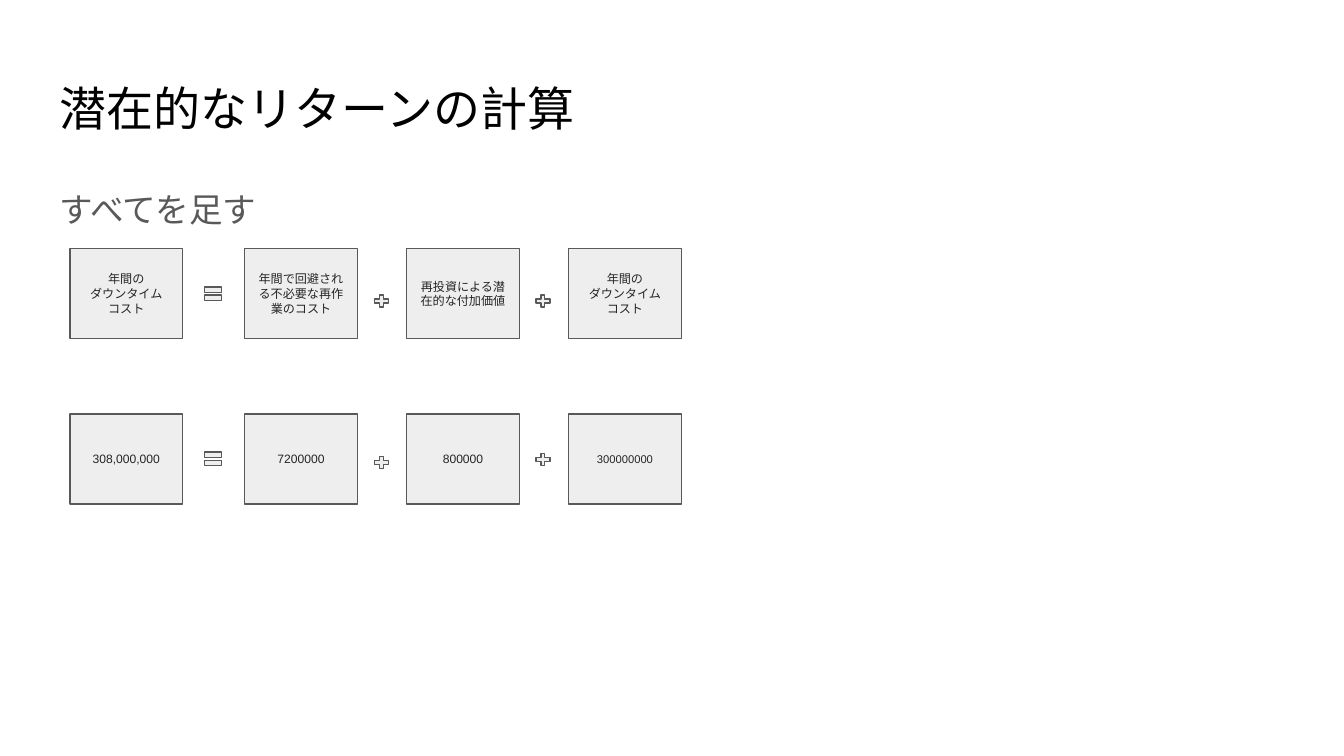
from pptx import Presentation
from pptx.dml.color import RGBColor
from pptx.enum.shapes import MSO_SHAPE
from pptx.enum.text import MSO_ANCHOR, MSO_AUTO_SIZE, PP_ALIGN
from pptx.util import Inches, Pt
from lxml import etree

TITLE = "潜在的なリターンの計算"
SUBTITLE = "すべてを足す"
DOWNTIME = "年間の\nダウンタイム\nコスト"

# Each term: text and font size; plus_tops belong to the two plus signs.
EQUATIONS = [
    {"top": 1.85, "plus_tops": [2.18, 2.18],
     "terms": [(DOWNTIME, 6.5), ("年間で回避される不必要な再作業のコスト", 6.5),
               ("再投資による潜在的な付加価値", 6.5), (DOWNTIME, 6.5)]},
    {"top": 3.08, "plus_tops": [3.38, 3.36],
     "terms": [("308,000,000", 6.5), ("7200000", 6.5),
               ("800000", 6.5), ("300000000", 6)]},
]
COLORS = {"title": "000000", "subtitle": "595959", "text": "252525",
          "fill": "EEEEEE", "line": "595959"}
FONT = "Arial"
SLIDE_WIDTH = 10
SLIDE_HEIGHT = SLIDE_WIDTH * 9 / 16
RESULT_LEFT, FIRST_TERM_LEFT, LAST_TERM_LEFT = 0.52, 1.82, 4.23
TERM_STEP = (LAST_TERM_LEFT - FIRST_TERM_LEFT) / 2
BOX_WIDTH, BOX_HEIGHT = 0.84, 0.67
EQUAL_LEFT, EQUAL_SIZE = 1.5, 0.17
PLUS_LEFT, PLUS_STEP, PLUS_WIDTH, PLUS_HEIGHT = 2.77, 1.2, 0.14, 0.12


def color(name):
    return RGBColor.from_string(COLORS[name])


def place(shape, left, top, width, height):
    shape.left, shape.top = Inches(left), Inches(top)
    shape.width, shape.height = Inches(width), Inches(height)


def write(shape, text, size, color_name, align, anchor):
    frame = shape.text_frame
    frame.text = text
    frame.word_wrap = True
    frame.auto_size = MSO_AUTO_SIZE.NONE
    frame.vertical_anchor = anchor
    frame.margin_left = frame.margin_right = Inches(0.1)
    frame.margin_top = frame.margin_bottom = Inches(0.1)
    for paragraph in frame.paragraphs:
        paragraph.alignment = align
        paragraph.space_before = Pt(0)
        for run in paragraph.runs:
            run.font.name = FONT
            run.font.size = Pt(size)
            run.font.color.rgb = color(color_name)


def add_outlined(page, kind, left, top, width, height, adjustments=()):
    shape = page.shapes.add_shape(kind, Inches(left), Inches(top),
                                  Inches(width), Inches(height))
    shape.shadow.inherit = False
    shape.fill.solid()
    shape.fill.fore_color.rgb = color("fill")
    shape.line.color.rgb = color("line")
    shape.line.width = Pt(0.75)
    for index, value in enumerate(adjustments):
        shape.adjustments[index] = value
    return shape


def remove_bullet(paragraph):
    properties = paragraph._p.get_or_add_pPr()
    properties.set("marL", "0")
    properties.set("indent", "0")
    namespace = properties.nsmap["a"]
    etree.SubElement(properties, f"{{{namespace}}}buNone")


def add_equation(page, top, plus_tops, terms):
    """Draw one row: result = term + term + term."""
    lefts = [RESULT_LEFT] + [FIRST_TERM_LEFT + i * TERM_STEP for i in range(3)]
    for left, (text, size) in zip(lefts, terms):
        box = add_outlined(page, MSO_SHAPE.RECTANGLE, left, top,
                           BOX_WIDTH, BOX_HEIGHT)
        write(box, text, size, "text", PP_ALIGN.CENTER, MSO_ANCHOR.MIDDLE)
    add_outlined(page, MSO_SHAPE.MATH_EQUAL, EQUAL_LEFT,
                 top + (BOX_HEIGHT - EQUAL_SIZE) / 2,
                 EQUAL_SIZE, EQUAL_SIZE, (0.235, 0.118))
    for index, plus_top in enumerate(plus_tops):
        add_outlined(page, MSO_SHAPE.MATH_PLUS, PLUS_LEFT + index * PLUS_STEP,
                     plus_top, PLUS_WIDTH, PLUS_HEIGHT, (0.235,))


def main():
    deck = Presentation()
    deck.slide_width, deck.slide_height = Inches(SLIDE_WIDTH), Inches(SLIDE_HEIGHT)
    page = deck.slides.add_slide(deck.slide_layouts[1])

    title, body = page.shapes.title, page.placeholders[1]
    place(title, 0.34, 0.49, 9.32, 0.63)
    write(title, TITLE, 25.2, "title", PP_ALIGN.LEFT, MSO_ANCHOR.TOP)
    place(body, 0.34, 1.26, 9.32, 3.74)
    write(body, SUBTITLE, 18, "subtitle", PP_ALIGN.LEFT, MSO_ANCHOR.TOP)
    subtitle = body.text_frame.paragraphs[0]
    subtitle.line_spacing = 1.15
    subtitle.space_after = Pt(12)
    remove_bullet(subtitle)

    for equation in EQUATIONS:
        add_equation(page, **equation)
    deck.save("out.pptx")


if __name__ == "__main__":
    main()
